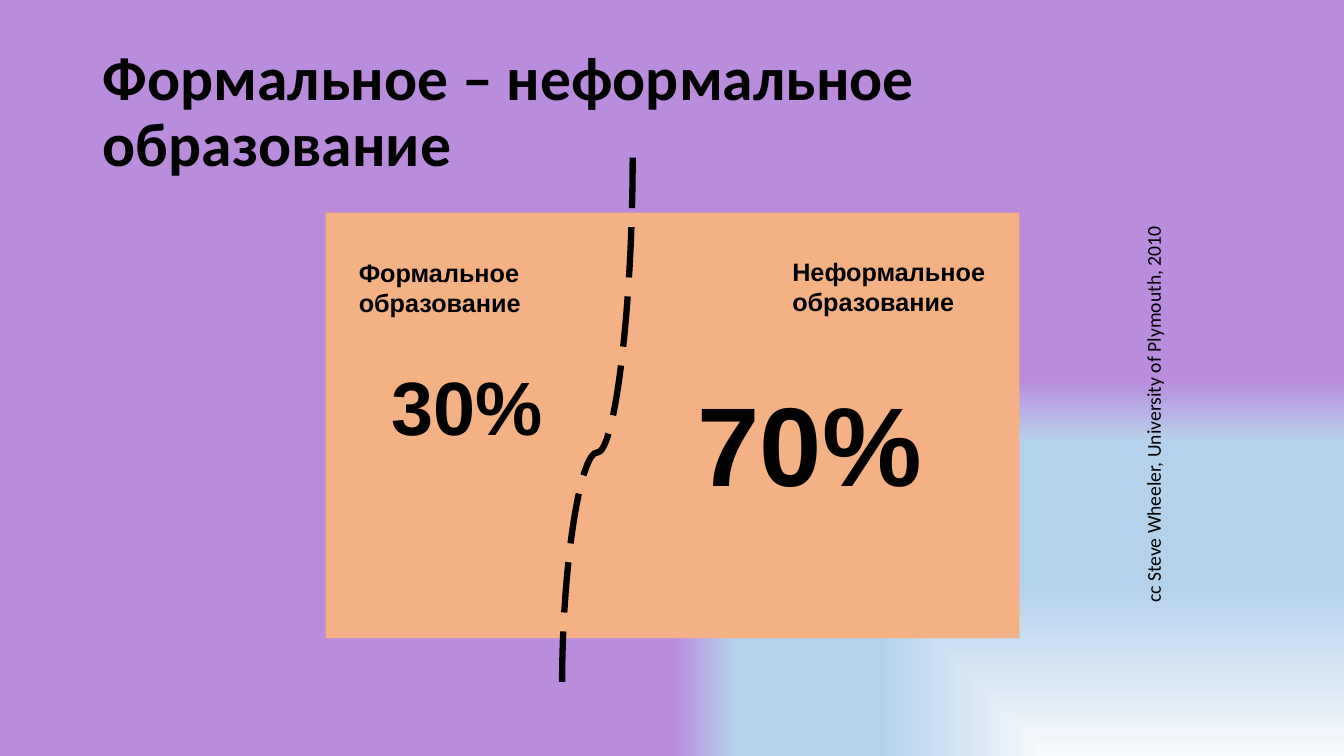
from dataclasses import dataclass

from lxml import etree
from pptx import Presentation
from pptx.dml.color import RGBColor
from pptx.enum.dml import MSO_LINE
from pptx.enum.shapes import MSO_CONNECTOR, MSO_SHAPE
from pptx.enum.text import MSO_ANCHOR, MSO_AUTO_SIZE as AutoSize, PP_ALIGN
from pptx.oxml import parse_xml
from pptx.oxml.ns import nsdecls, qn
from pptx.slide import Slide
from pptx.text.text import TextFrame
from pptx.util import Inches, Pt

BLACK = "000000"
ORANGE = "F4B183"
GRADIENT = [(0, "F7FAFD"), (45, "B5D2EC"), (83, "B5D2EC"), (100, "BA8CDC")]


@dataclass
class Label:
    text: str
    left: float
    top: float
    width: float
    height: float
    size: int
    font: str = "Arial"
    bold: bool = True
    wrap: bool = True
    rotation: int = 0


LABELS = [
    Label("Формальное образование", 3.46, 2.5, 2.11, 0.71, 18),
    Label("Неформальное образование", 7.76, 2.49, 2.19, 0.71, 18),
    Label("cc Steve Wheeler, University of Plymouth, 2010", 9.27, 3.75, 4.33, 0.33,
          14, font="Calibri", bold=False, rotation=270),
    Label("70%", 6.82, 3.67, 2.45, 1.45, 80, wrap=False),
    Label("30%", 3.78, 3.52, 1.72, 1.01, 54, wrap=False),
]


def color(value: str) -> RGBColor:
    return RGBColor.from_string(value)


def write(frame: TextFrame, text: str, *, size: int, font: str = "Arial",
          bold: bool = True, wrap: bool = True, spacing: float = 1.0,
          auto_size: AutoSize = AutoSize.SHAPE_TO_FIT_TEXT) -> None:
    frame.word_wrap = wrap
    frame.auto_size = auto_size
    paragraph = frame.paragraphs[0]
    paragraph.alignment = PP_ALIGN.LEFT
    paragraph.line_spacing = spacing
    run = paragraph.add_run()
    run.text = text
    run.font.name = font
    run.font.size = Pt(size)
    run.font.bold = bold
    run.font.color.rgb = color(BLACK)


def set_background(slide: Slide) -> None:
    stops = "".join(
        f'<a:gs pos="{position * 1000}"><a:srgbClr val="{value}"/></a:gs>'
        for position, value in GRADIENT)
    gradient = parse_xml(
        f'<a:gradFill {nsdecls("a")} rotWithShape="1"><a:gsLst>{stops}</a:gsLst>'
        '<a:path path="rect"><a:fillToRect l="100000" t="100000"/></a:path>'
        '</a:gradFill>')
    slide.background.fill.solid()
    properties = slide.element.find(".//" + qn("p:bgPr"))
    properties.replace(properties.find(qn("a:solidFill")), gradient)


def add_title(slide: Slide, text: str) -> None:
    title = slide.shapes.title
    title.left, title.top = Inches(0.92), Inches(0.4)
    title.width, title.height = Inches(11.5), Inches(1.45)
    title.text_frame.vertical_anchor = MSO_ANCHOR.MIDDLE
    write(title.text_frame, text, size=44, font="Calibri", spacing=0.9,
          auto_size=AutoSize.NONE)


def add_panel(slide: Slide) -> None:
    panel = slide.shapes.add_shape(MSO_SHAPE.RECTANGLE, Inches(3.23), Inches(2.11),
                                   Inches(6.88), Inches(4.22))
    panel.shadow.inherit = False
    panel.fill.solid()
    panel.fill.fore_color.rgb = color(ORANGE)
    panel.line.fill.background()


def add_divider(slide: Slide) -> None:
    divider = slide.shapes.add_connector(MSO_CONNECTOR.CURVE, Inches(3.31), Inches(3.83),
                                         Inches(8.54), Inches(4.53))
    divider.line.color.rgb = color(BLACK)
    divider.line.width = Pt(4.5)
    divider.line.dash_style = MSO_LINE.LONG_DASH
    # Quarter turn, bend position and no shadow
    properties = divider.element.spPr
    properties.find(qn("a:xfrm")).set("rot", "5400000")
    geometry = properties.find(qn("a:prstGeom"))
    adjustments = geometry.find(qn("a:avLst"))
    etree.SubElement(adjustments, qn("a:gd"), name="adj1", fmla="val 55900")
    etree.SubElement(properties, qn("a:effectLst"))


def add_label(slide: Slide, label: Label) -> None:
    box = slide.shapes.add_textbox(Inches(label.left), Inches(label.top),
                                   Inches(label.width), Inches(label.height))
    box.rotation = label.rotation
    write(box.text_frame, label.text, size=label.size, font=label.font,
          bold=label.bold, wrap=label.wrap)


def main() -> None:
    presentation = Presentation()
    presentation.slide_width = Inches(13.33)
    presentation.slide_height = Inches(7.5)
    slide = presentation.slides.add_slide(presentation.slide_layouts[5])

    # Background and title
    set_background(slide)
    add_title(slide, "Формальное – неформальное образование")

    # Panel split by a dashed curve
    add_panel(slide)
    add_divider(slide)

    # Labels, shares and source
    for label in LABELS:
        add_label(slide, label)

    presentation.save("out.pptx")


if __name__ == "__main__":
    main()
